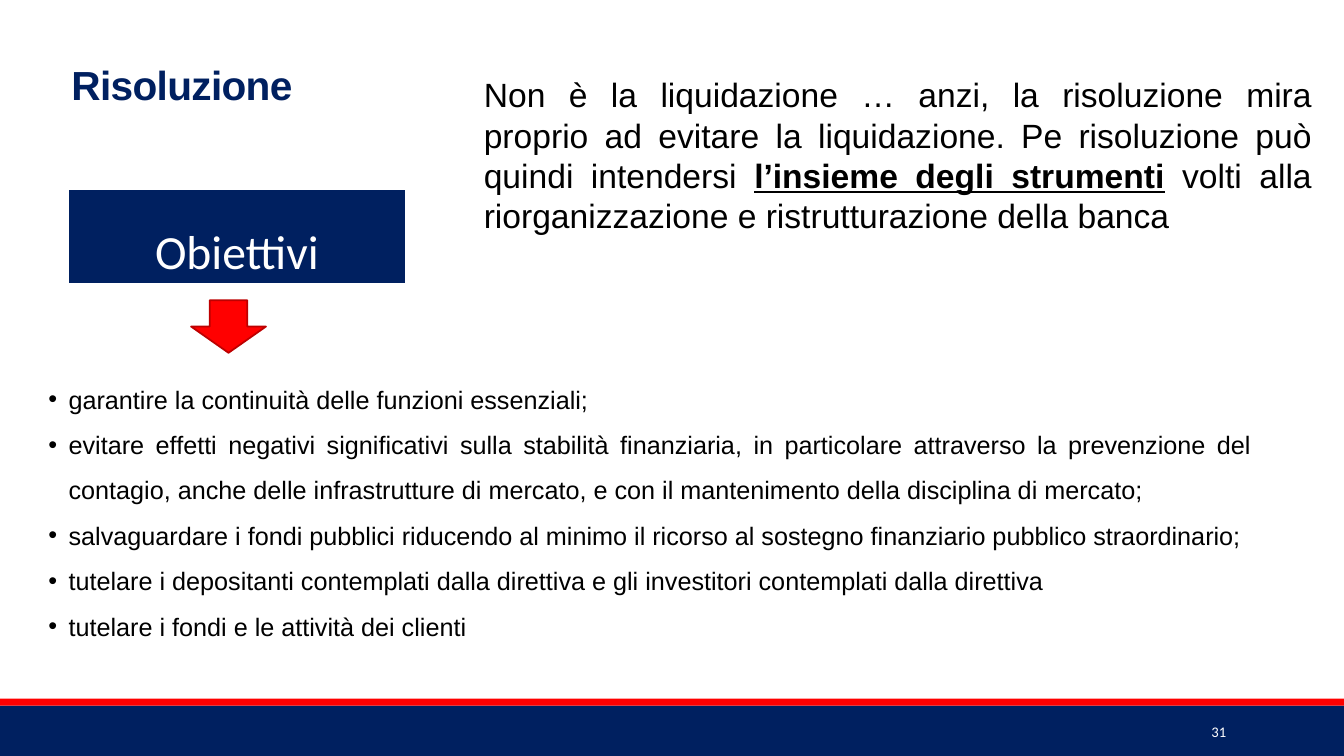
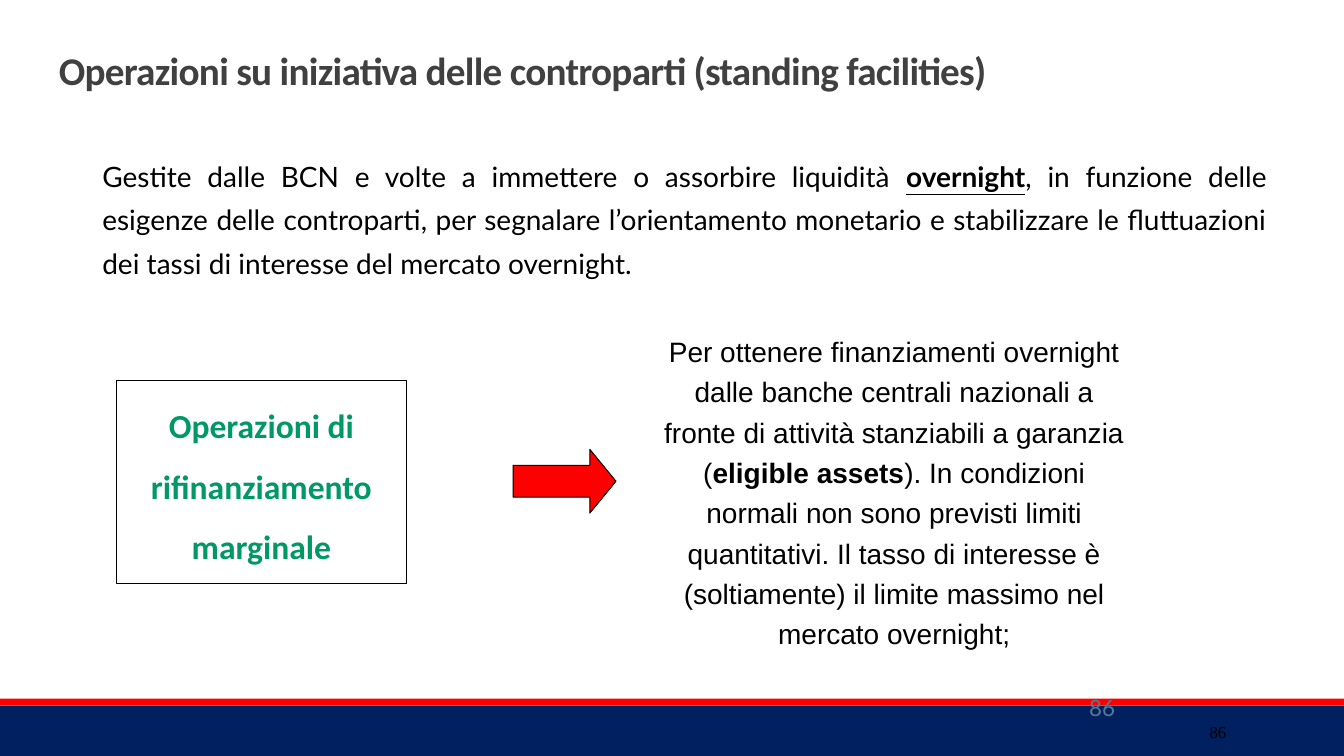
from pptx import Presentation
from pptx.dml.color import RGBColor as Rgb
from pptx.enum.shapes import MSO_SHAPE as Shape
from pptx.enum.text import MSO_ANCHOR as Anchor, PP_ALIGN as Align
from pptx.util import Pt
from lxml.etree import SubElement as Sub
from pptx.oxml.ns import qn

# Shared look
WIDE, HIGH = 960, 540
NAVY, RED, DARK = "002060", "FF0000", "BD0000"
WHITE, BLACK, GREY = "FFFFFF", "000000", "404040"
GREEN, SLATE = "009966", "587993"
SANS, BODY, LATO = "Arial", "Calibri", "Lato"
BAND, STRIPE = 36, 5

GOALS = [
    "garantire la continuità delle funzioni essenziali;",
    "evitare effetti negativi significativi sulla stabilità finanziaria, in "
    "particolare attraverso la prevenzione del contagio, anche delle "
    "infrastrutture di mercato, e con il mantenimento della disciplina di mercato;",
    "salvaguardare i fondi pubblici riducendo al minimo il ricorso al sostegno "
    "finanziario pubblico straordinario;",
    "tutelare i depositanti contemplati dalla direttiva e gli investitori "
    "contemplati dalla direttiva",
    "tutelare i fondi e le attività dei clienti",
]
# Asterisks mark the stressed words
LEAD = ("Non è la liquidazione … anzi, la risoluzione mira proprio ad evitare la "
        "liquidazione. Pe risoluzione può quindi intendersi *l’insieme degli "
        "strumenti* volti alla riorganizzazione e ristrutturazione della banca")
INTRO = ("Gestite dalle BCN e volte a immettere o assorbire liquidità *overnight*, "
         "in funzione delle esigenze delle controparti, per segnalare "
         "l’orientamento monetario e stabilizzare le fluttuazioni dei tassi di "
         "interesse del mercato overnight.")
TERMS = ("Per ottenere finanziamenti overnight dalle banche centrali nazionali a "
         "fronte di attività stanziabili a garanzia (*eligible assets*). In "
         "condizioni normali non sono previsti limiti quantitativi. Il tasso di "
         "interesse è (soltiamente) il limite massimo nel mercato overnight;")


def paint(color, tone):
    """Give a fill's, line's or font's colour a hex value."""
    color.rgb = Rgb.from_string(tone)


def form(slide, kind, box, fill=None, line=None, width=1):
    shape = slide.shapes.add_shape(kind, *map(Pt, box))
    shape.shadow.inherit = False
    if fill:
        shape.fill.solid()
        paint(shape.fill.fore_color, fill)
    else:
        shape.fill.background()
    if line:
        paint(shape.line.color, line)
        shape.line.width = Pt(width)
    else:
        shape.line.fill.background()
    return shape


def bullet(para, indent=14.4):
    props = para._p.get_or_add_pPr()
    props.set("marL", str(Pt(indent)))
    props.set("indent", str(-Pt(indent)))
    Sub(props, qn("a:buFont")).set("typeface", SANS)
    Sub(props, qn("a:buChar")).set("char", "•")


def write(shape, lines, size, face, tone=BLACK, align=Align.LEFT, space=1,
          bold=False, under=False, dots=False, tight=False, anchor=Anchor.TOP):
    frame = shape.text_frame
    frame.word_wrap = True
    frame.vertical_anchor = anchor
    for i, line in enumerate(lines):
        para = frame.add_paragraph() if i else frame.paragraphs[0]
        if dots:
            bullet(para)
        para.alignment = align
        para.line_spacing = space
        for j, part in enumerate(line.split("*")):
            run = para.add_run()
            run.text = part
            font = run.font
            font.size, font.name = Pt(size), face
            font.bold = bold or j % 2 == 1
            font.underline = under and j % 2 == 1
            paint(font.color, tone)
            if tight:
                run._r.get_or_add_rPr().set("spc", "-50")


def text(slide, box, lines, *args, **style):
    write(slide.shapes.add_textbox(*map(Pt, box)), lines, *args, **style)


def title(slide, box, line, size, face, tone, **style):
    text(slide, box, [line], size, face, tone, bold=True, tight=True, **style)


def footer(slide, box, page, size, face, tone):
    left, top, wide, high = box
    form(slide, Shape.RECTANGLE, box, NAVY)
    form(slide, Shape.RECTANGLE, (left, top - STRIPE, wide, STRIPE), RED)
    text(slide, (left + 780, top + 4.5, 103, 28.5), [page], size, face, tone,
         align=Align.RIGHT, anchor=Anchor.MIDDLE)


def target(slide, box):
    """Heading block with an arrow down to the goals."""
    left, top, wide, high = box
    block = form(slide, Shape.RECTANGLE, (left, top, wide, 69), NAVY, WHITE, 2)
    write(block, ["Obiettivi"], 34, BODY, WHITE, Align.CENTER, 1.5)
    form(slide, Shape.DOWN_ARROW, (left + 88.5, top + high - 37.5, 53.5, 37.5),
         RED, DARK, 1.25)


def scheme(slide, box):
    """Framed operation, arrow and its terms."""
    left, top, wide, high = box
    frame = form(slide, Shape.RECTANGLE, (left, top + 41, 207.5, 145),
                 line=BLACK, width=0.75)
    frame.text_frame.margin_left = frame.text_frame.margin_right = 0
    write(frame, ["Operazioni di rifinanziamento marginale"], 24, BODY, GREEN,
          Align.CENTER, 1.5, bold=True)
    arrow = form(slide, Shape.RIGHT_ARROW, (left + 283.5, top + 90.5, 73.5, 45.5),
                 RED, BLACK, 0.75)
    arrow.adjustments[1] = 0.41
    text(slide, (left + wide - 351.5, top, 351.5, high), [TERMS], 20, SANS,
         align=Align.CENTER, space=1.2)


def goals(slide, foot):
    title(slide, (44, 21.5, 230.5, 90), "Risoluzione", 29, SANS, NAVY, space=1.5)
    text(slide, (338.5, 49.5, 605.5, 124), [LEAD], 24, SANS,
         align=Align.JUSTIFY, under=True)
    target(slide, (48, 134.5, 242.5, 117.5))
    text(slide, (27.5, 260, 873.5, 199.5), GOALS, 18, SANS,
         align=Align.JUSTIFY, space=1.5, dots=True)
    footer(slide, foot, "31", 10.5, BODY, WHITE)


def lending(slide, foot):
    title(slide, (35, 21, 811, 63.5),
          "Operazioni su iniziativa delle controparti (standing facilities)",
          28, BODY, GREY, space=0.85, anchor=Anchor.MIDDLE)
    text(slide, (66, 103, 846, 101.5), [INTRO], 20, LATO,
         align=Align.JUSTIFY, space=1.3, under=True)
    scheme(slide, (83, 230.5, 731.5, 240))
    footer(slide, foot, "86", 12, "Times New Roman", BLACK)
    text(slide, (636, 492, 167.5, 36), ["86"], 16, LATO, SLATE, Align.RIGHT)


def main():
    deck = Presentation()
    deck.slide_width, deck.slide_height = Pt(WIDE), Pt(HIGH)
    for build in (goals, lending):
        slide = deck.slides.add_slide(deck.slide_layouts[6])
        build(slide, (0, HIGH - BAND, WIDE, BAND))
    deck.save("out.pptx")


if __name__ == "__main__":
    main()
